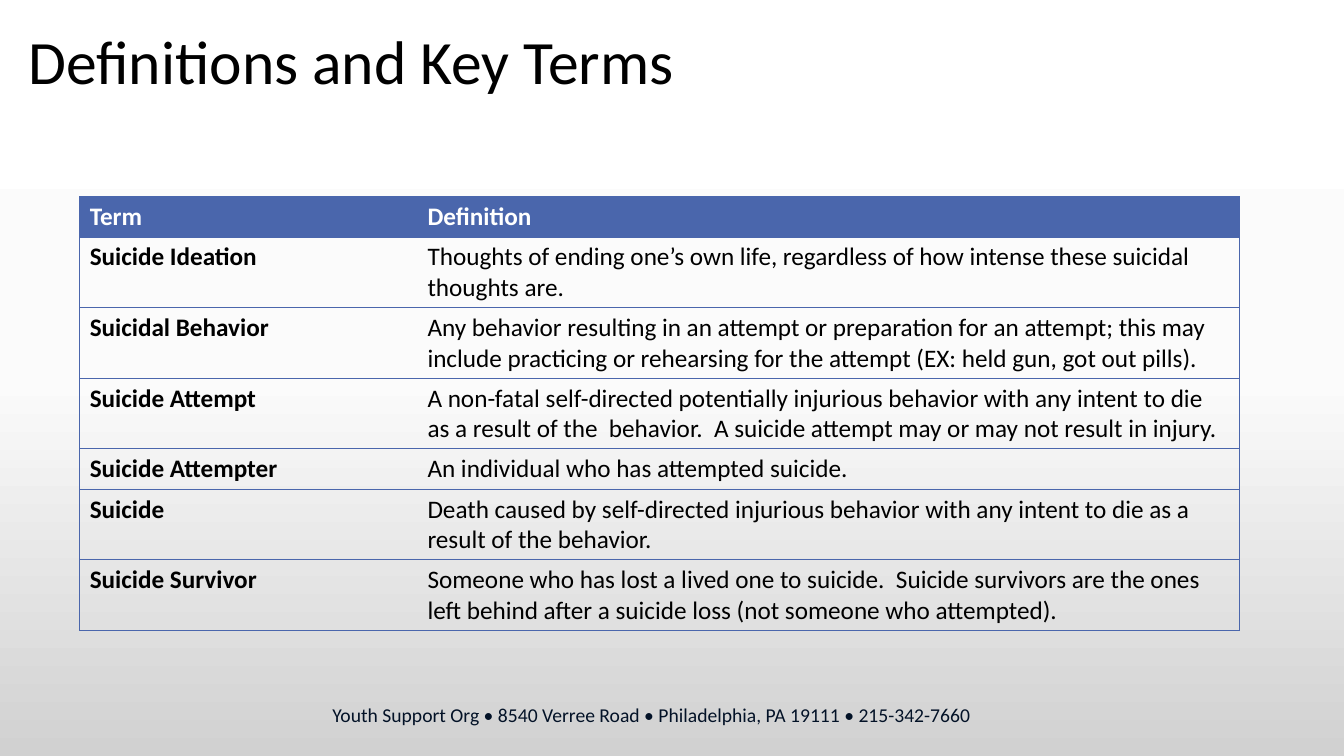
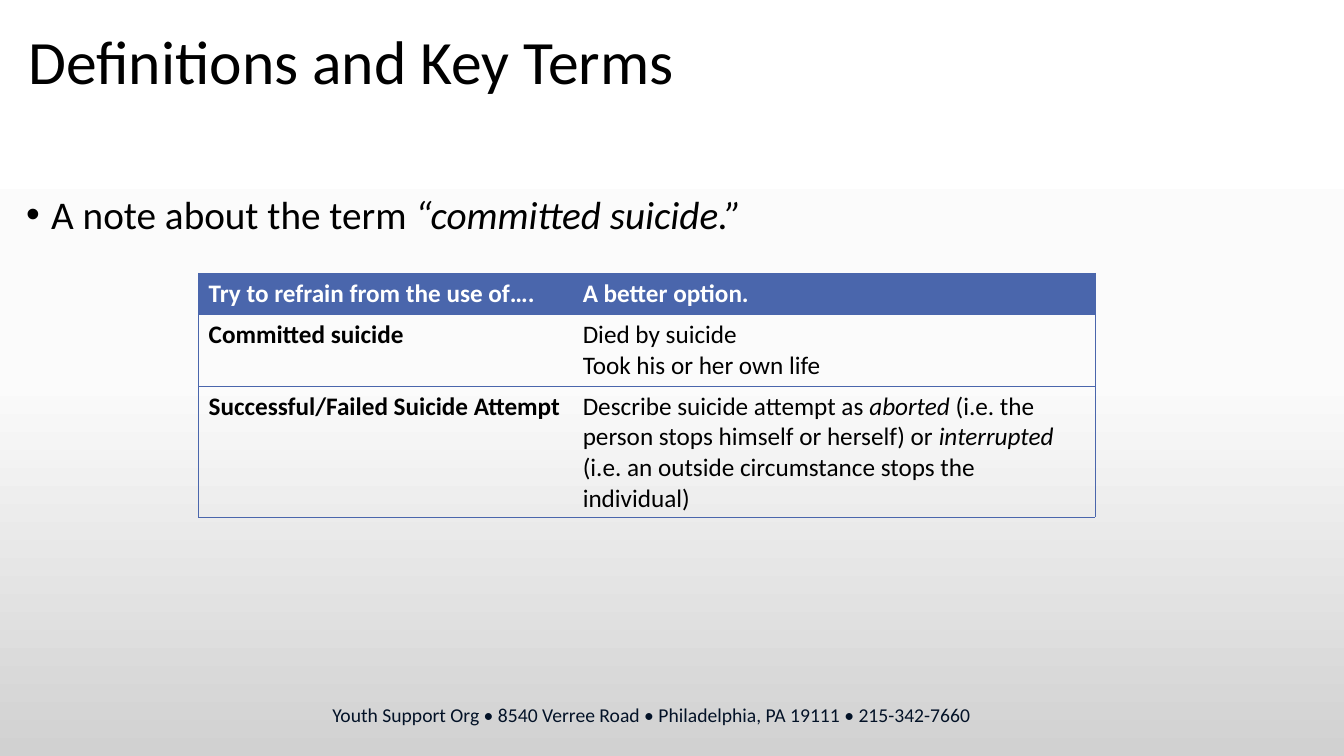
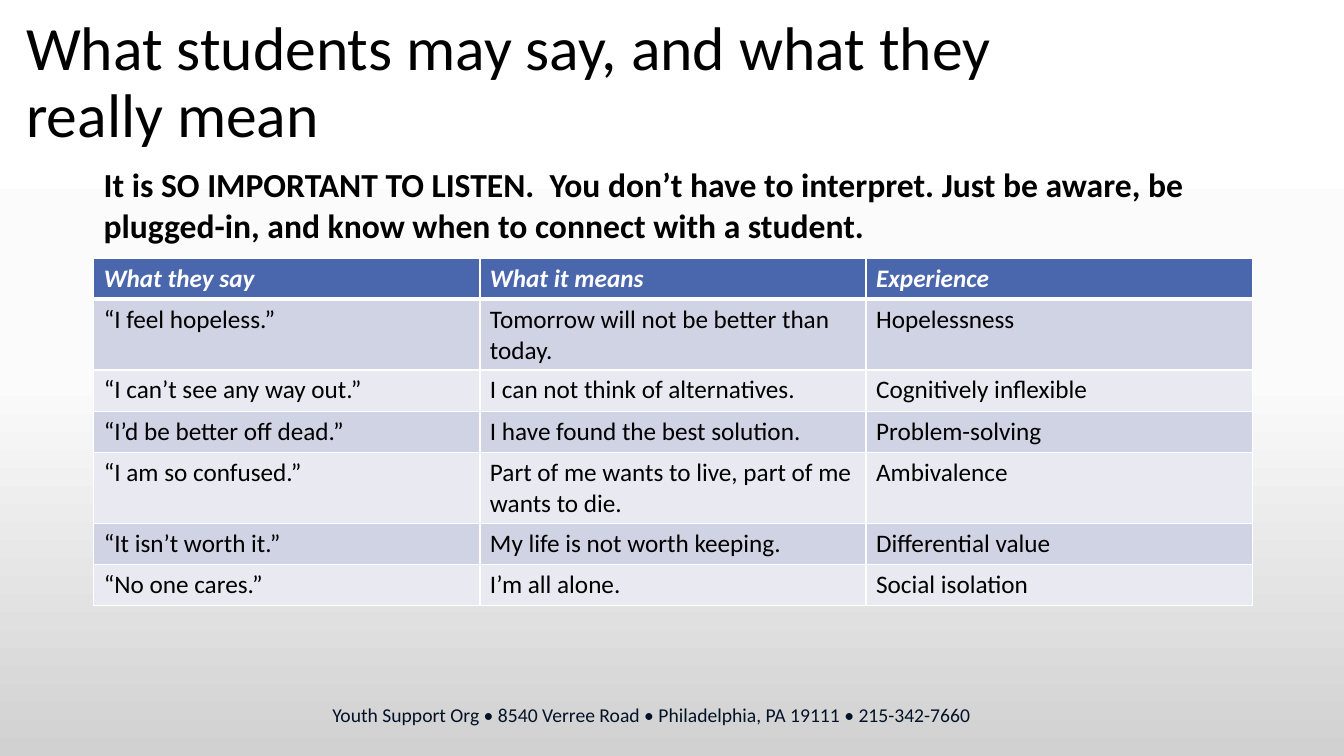
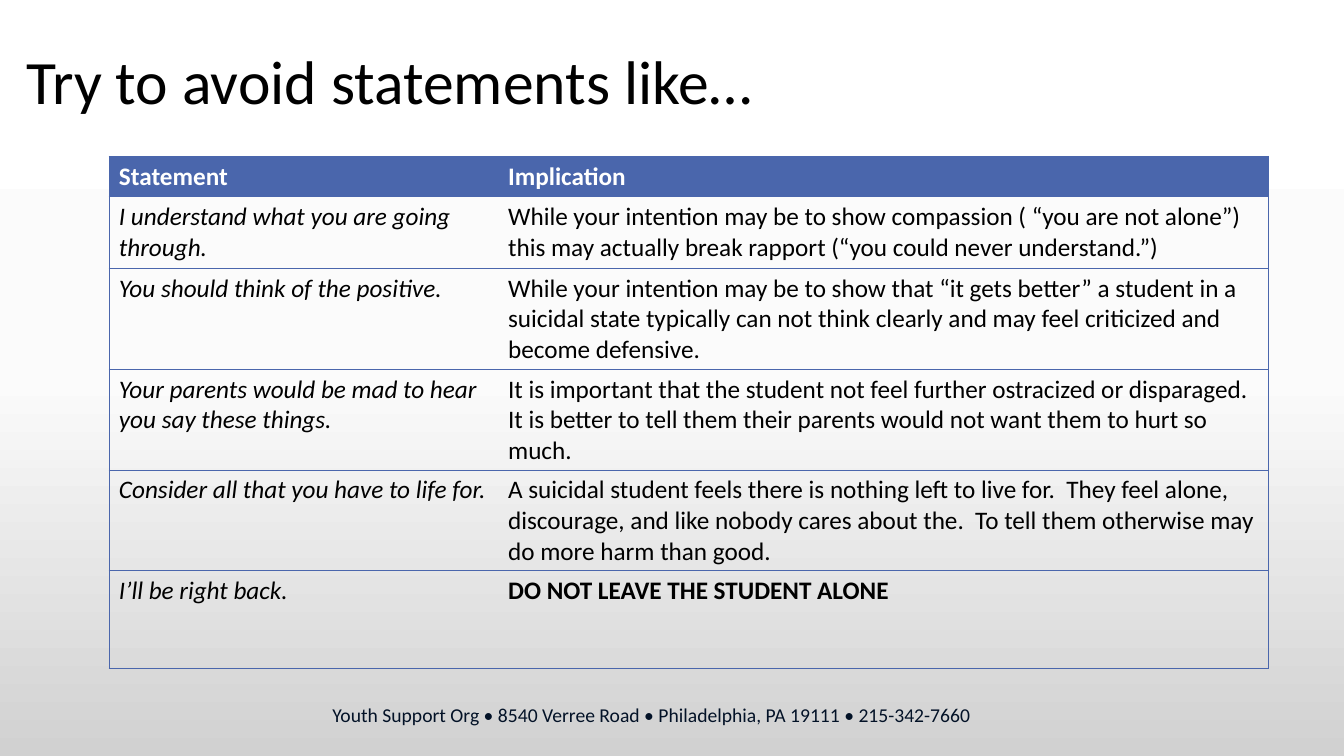
from lxml.etree import SubElement
from pptx import Presentation
from pptx.dml.color import RGBColor
from pptx.enum.text import MSO_ANCHOR, MSO_AUTO_SIZE, PP_ALIGN
from pptx.oxml.ns import qn
from pptx.util import Inches, Pt

FONT = "Calibri"
BLACK, WHITE, BLUE, NAVY = "000000", "FFFFFF", "4A66AC", "031227"
BANDS = ["D0D3E3", "E9EAF1"]
FADE = [(0, "FFFFFF"), (50, "FBFBFB"), (100, "D1D1D1")]
PLAIN = "{2D5ABB26-0587-4C30-8999-92F81FD0307C}"
FOOTER = "Youth Support Org • 8540 Verree Road • Philadelphia, PA 19111 • 215-342-7660"
SHORT = (0.18, 0.23, 6.83, 0.83)
TALL = (0.16, 0.12, 10.48, 1.43)


def paint(target, code):
    target.rgb = RGBColor.from_string(code)


def write(par, text, size, color=BLACK, bold=False, italic=False):
    for num, part in enumerate(text.split("*")):
        run = par.add_run()
        run.text = part
        if num % 2:
            run.font.italic = True
    font = par.font
    font.name, font.size = FONT, Pt(size)
    font.bold, font.italic = bold, italic
    paint(font.color, color)


def place(shape, spot):
    shape.left, shape.top, shape.width, shape.height = map(Inches, spot)


def label(slide, spot):
    box = slide.shapes.add_textbox(*map(Inches, spot))
    box.text_frame.word_wrap = True
    return box.text_frame.paragraphs[0]


def bullet(par):
    props = par._p.get_or_add_pPr()
    props.set("marL", str(Inches(0.25)))
    props.set("indent", str(-Inches(0.25)))
    SubElement(props, qn("a:buFont"), typeface="Arial")
    SubElement(props, qn("a:buChar"), char="•")
    par.line_spacing = 0.9


def shade(master):
    fill = master.background.fill
    fill.gradient()
    fill.gradient_angle = 270
    stops = master._element.find(".//" + qn("p:bg")).find(".//" + qn("a:gsLst"))
    for stop in list(stops):
        stops.remove(stop)
    for pos, code in FADE:
        stop = SubElement(stops, qn("a:gs"), pos=str(pos * 1000))
        SubElement(stop, qn("a:srgbClr"), val=code)


def start(deck, title, spot):
    slide = deck.slides.add_slide(deck.slide_layouts[5])
    par = label(slide, (0.16, 6.92, 12.61, 0.4))
    par.alignment = PP_ALIGN.CENTER
    write(par, FOOTER, 14, NAVY)
    head = slide.shapes.title
    place(head, spot)
    frame = head.text_frame
    frame.auto_size = MSO_AUTO_SIZE.NONE
    frame.vertical_anchor = MSO_ANCHOR.MIDDLE
    par = frame.paragraphs[0]
    par.alignment = PP_ALIGN.LEFT
    par.line_spacing = 0.9
    write(par, title, 44)
    return slide


def edge(cell, side, color, width):
    line = SubElement(cell._tc.get_or_add_tcPr(), qn("a:ln" + side), w=str(Pt(width)))
    fill = SubElement(line, qn("a:solidFill"))
    SubElement(fill, qn("a:srgbClr"), val=color)


def frame_cell(cell, row, col, last, banded):
    if banded:
        for side in "LRTB":
            thick = (side, row) in (("B", 0), ("T", 1))
            edge(cell, side, WHITE, 3 if thick else 1)
        return
    if col == 0:
        edge(cell, "L", BLUE, 0.5)
    if col == last:
        edge(cell, "R", BLUE, 0.5)
    for side in "TB":
        edge(cell, side, BLUE, 0.5)


def fill_cell(cell, row, banded):
    if row and not banded:
        cell.fill.background()
        return
    cell.fill.solid()
    paint(cell.fill.fore_color, BANDS[(row - 1) % 2] if row else BLUE)


def grid(slide, left, top, widths, heights, rows, lead=None, head=None, banded=False):
    spot = (left, top, sum(widths), sum(heights))
    shape = slide.shapes.add_table(len(rows), len(widths), *map(Inches, spot))
    table = shape.table
    table.horz_banding = False
    table._tbl.tblPr.find(qn("a:tableStyleId")).text = PLAIN
    for col, width in zip(table.columns, widths):
        col.width = Inches(width)
    for line, height in zip(table.rows, heights):
        line.height = Inches(height)
    for row, texts in enumerate(rows):
        for col, text in enumerate(texts):
            cell = table.cell(row, col)
            frame_cell(cell, row, col, len(widths) - 1, banded)
            fill_cell(cell, row, banded)
            style = {} if col else lead or {}
            if row == 0:
                style = {"color": WHITE, "bold": True, **(head or {})}
            frame = cell.text_frame
            for num, part in enumerate(text.split("\n")):
                par = frame.add_paragraph() if num else frame.paragraphs[0]
                write(par, part, 18, **style)
    return table


def terms(deck):
    slide = start(deck, "Definitions and Key Terms", SHORT)
    rows = [
        ("Term", "Definition"),
        ("Suicide Ideation", "Thoughts of ending one’s own life, regardless of how intense these suicidal thoughts are."),
        ("Suicidal Behavior", "Any behavior resulting in an attempt or preparation for an attempt; this may include practicing or rehearsing for the attempt (EX: held gun, got out pills)."),
        ("Suicide Attempt", "A non-fatal self-directed potentially injurious behavior with any intent to die as a result of the  behavior.  A suicide attempt may or may not result in injury."),
        ("Suicide Attempter", "An individual who has attempted suicide."),
        ("Suicide", "Death caused by self-directed injurious behavior with any intent to die as a result of the behavior."),
        ("Suicide Survivor", "Someone who has lost a lived one to suicide.  Suicide survivors are the ones left behind after a suicide loss (not someone who attempted)."),
    ]
    heights = [0.38, 0.65, 0.65, 0.65, 0.38, 0.65, 0.65]
    grid(slide, 0.79, 1.95, [3.35, 8.15], heights, rows, lead={"bold": True})


def wording(deck):
    slide = start(deck, "Definitions and Key Terms", SHORT)
    par = label(slide, (0.16, 1.89, 12.61, 0.6))
    bullet(par)
    write(par, "A note about the term *“committed suicide.”*", 28)
    rows = [
        ("Try to refrain from the use of….", "A better option."),
        ("Committed suicide", "Died by suicide\nTook his or her own life"),
        ("Successful/Failed Suicide Attempt", "Describe suicide attempt as *aborted* (i.e. the person stops himself or herself) or *interrupted* (i.e. an outside circumstance stops the individual)"),
    ]
    grid(slide, 1.97, 2.71, [3.71, 5.18], [0.41, 0.71, 1.29], rows, lead={"bold": True})


def meaning(deck):
    slide = start(deck, "What students may say, and what they really mean", TALL)
    rows = [
        ("What they say", "What it means", "Experience"),
        ("“I feel hopeless.”", "Tomorrow will not be better than today.", "Hopelessness"),
        ("“I can’t see any way out.”", "I can not think of alternatives.", "Cognitively inflexible"),
        ("“I’d be better off dead.”", "I have found the best solution.", "Problem-solving"),
        ("“I am so confused.”", "Part of me wants to live, part of me wants to die.", "Ambivalence"),
        ("“It isn’t worth it.”", "My life is not worth keeping.", "Differential value"),
        ("“No one cares.”", "I’m all alone.", "Social isolation"),
    ]
    grid(slide, 0.93, 2.56, [3.83] * 3, [0.41] * 7, rows, head={"italic": True}, banded=True)
    par = label(slide, (0.93, 1.58, 10.98, 1.21))
    write(par, "It is SO IMPORTANT TO LISTEN.  You don’t have to interpret. Just be aware, be plugged-in, and know when to connect with a student.", 24, bold=True)


def avoid(deck):
    slide = start(deck, "Try to avoid statements like…", TALL)
    rows = [
        ("Statement", "Implication"),
        ("I understand what you are going through.", "While your intention may be to show compassion ( “you are not alone”) this may actually break rapport (“you could never understand.”)"),
        ("You should think of the positive.", "While your intention may be to show that “it gets better” a student in a suicidal state typically can not think clearly and may feel criticized and become defensive."),
        ("Your parents would be mad to hear you say these things.", "It is important that the student not feel further ostracized or disparaged.  It is better to tell them their parents would not want them to hurt so much."),
        ("Consider all that you have to life for.", "A suicidal student feels there is nothing left to live for.  They feel alone, discourage, and like nobody cares about the.  To tell them otherwise may do more harm than good."),
        ("I’ll be right back.", "DO NOT LEAVE THE STUDENT ALONE"),
    ]
    heights = [0.4, 0.71, 0.94, 0.94, 0.94, 0.97]
    table = grid(slide, 1.08, 1.55, [3.86, 7.64], heights, rows, lead={"italic": True})
    table.cell(5, 1).text_frame.paragraphs[0].font.bold = True


def main():
    deck = Presentation()
    deck.slide_width, deck.slide_height = Inches(13.33), Inches(7.5)
    shade(deck.slide_master)
    for build in (terms, wording, meaning, avoid):
        build(deck)
    deck.save("out.pptx")


if __name__ == "__main__":
    main()
